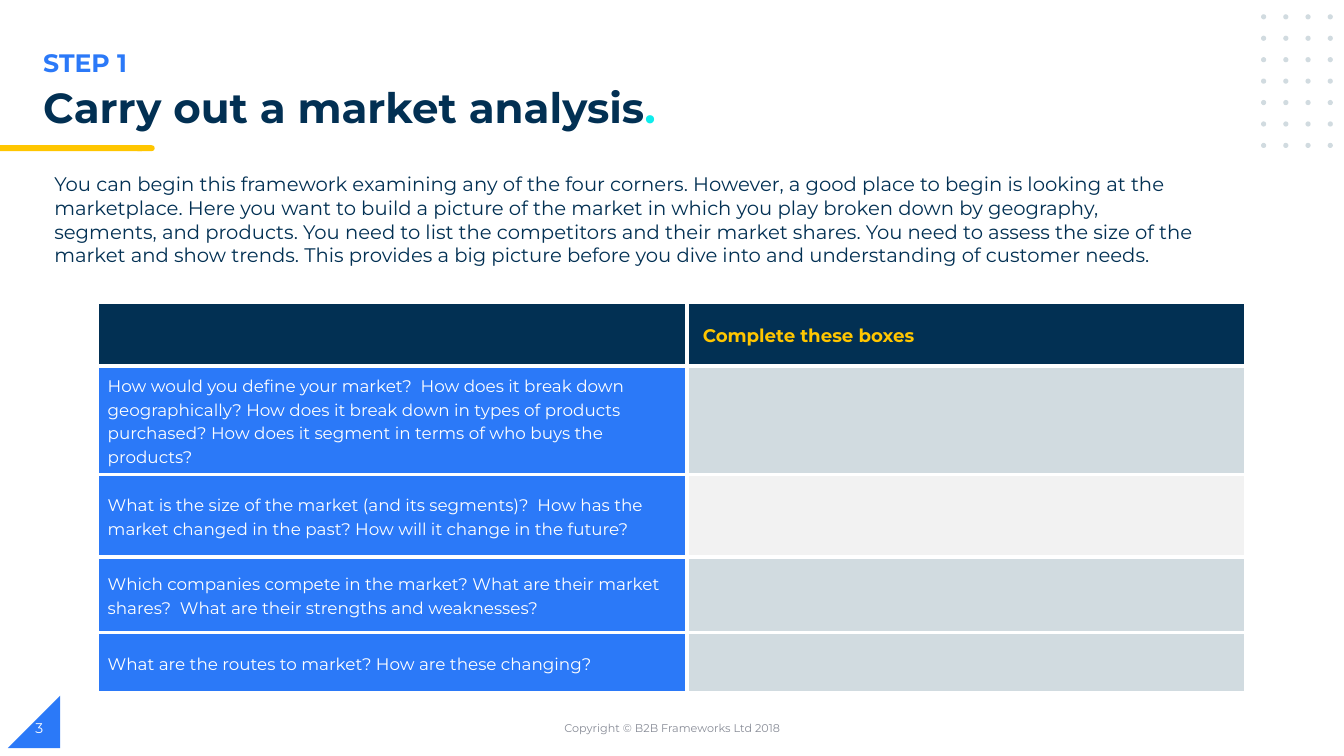
from dataclasses import dataclass
from itertools import product

from lxml.etree import SubElement
from pptx import Presentation
from pptx.dml.color import RGBColor
from pptx.enum.shapes import MSO_SHAPE
from pptx.enum.text import MSO_ANCHOR, PP_ALIGN
from pptx.oxml.ns import qn
from pptx.util import Cm, Pt


@dataclass(frozen=True)
class Theme:
    font: str = "Montserrat"
    spacer_font: str = "Arial"
    navy: str = "023053"
    blue: str = "2B79F8"
    yellow: str = "FFC600"
    cyan: str = "0EECEC"
    mist: str = "D1DBE0"
    pale: str = "F2F2F2"
    grey: str = "888C97"
    white: str = "FFFFFF"
    title: int = 30
    step: int = 18
    body: int = 14
    header: int = 13
    question: int = 12
    number: int = 10
    footer: int = 8


THEME = Theme()

INTRO = (
    "You can begin this framework examining any of the four corners. However, a good place "
    "to begin is looking at the marketplace. Here you want to build a picture of the market "
    "in which you play broken down by geography, segments, and products. You need to list the "
    "competitors and their market shares. You need to assess the size of the market and show "
    "trends. This provides a big picture before you dive into and understanding of customer needs."
)

# question, row height in cm, answer fill
QUESTIONS = [
    ("How would you define your market?  How does it break down geographically? How does it "
     "break down in types of products purchased? How does it segment in terms of who buys the "
     "products?", 2.74, THEME.mist),
    ("What is the size of the market (and its segments)?  How has the market changed in the "
     "past? How will it change in the future?", 2.08, THEME.pale),
    ("Which companies compete in the market? What are their market shares?  What are their "
     "strengths and weaknesses?", 1.9, THEME.mist),
    ("What are the routes to market? How are these changing?", 1.52, THEME.mist),
]
HEADER_HEIGHT = 1.6
COLUMN_WIDTHS = (14.86, 14.07)


def add_run(p, text, *, size, color, bold=False, font=THEME.font):
    r = p.add_run()
    r.text = text
    r.font.name = font
    r.font.size = Pt(size)
    r.font.bold = bold
    r.font.color.rgb = RGBColor.from_string(color)


def add_text(s, box, text, *, align=PP_ALIGN.LEFT, anchor=MSO_ANCHOR.TOP, spacing=1.0, **style):
    """Add a wrapping text box and return its paragraph."""
    tf = s.shapes.add_textbox(*map(Cm, box)).text_frame
    tf.word_wrap = True
    tf.vertical_anchor = anchor
    p = tf.paragraphs[0]
    p.alignment = align
    p.line_spacing = spacing
    add_run(p, text, **style)
    return p


def add_solid(s, kind, box, color):
    """Add a preset shape with a plain fill and no outline."""
    sp = s.shapes.add_shape(kind, *map(Cm, box))
    sp.shadow.inherit = False
    sp.fill.solid()
    sp.fill.fore_color.rgb = RGBColor.from_string(color)
    sp.line.fill.background()
    return sp


def add_dot_grid(s):
    for row, col in product(range(7), range(4)):
        add_solid(s, MSO_SHAPE.OVAL, (31.78 + 0.56 * col, 0.36 + 0.54 * row, 0.13, 0.13),
                  THEME.mist)


def style_cell(cell, fill):
    """Give a cell white borders, a fill and middle-anchored text; return its paragraph."""
    tc_pr = cell._tc.get_or_add_tcPr()
    for side in ("lnL", "lnR", "lnT", "lnB"):
        line = SubElement(tc_pr, qn(f"a:{side}"), w=str(Pt(3)))
        SubElement(SubElement(line, qn("a:solidFill")), qn("a:srgbClr"), val=THEME.white)
    cell.fill.solid()
    cell.fill.fore_color.rgb = RGBColor.from_string(fill)
    cell.vertical_anchor = MSO_ANCHOR.MIDDLE
    cell.margin_top = cell.margin_bottom = 0
    p = cell.text_frame.paragraphs[0]
    p.line_spacing = 1.15
    return p


def add_question_table(s):
    heights = [HEADER_HEIGHT] + [height for _, height, _ in QUESTIONS]
    table = s.shapes.add_table(len(heights), len(COLUMN_WIDTHS), Cm(2.46), Cm(7.62),
                               Cm(sum(COLUMN_WIDTHS)), Cm(sum(heights))).table
    table.first_row = table.horz_banding = False
    for column, width in zip(table.columns, COLUMN_WIDTHS):
        column.width = Cm(width)
    for row, height in zip(table.rows, heights):
        row.height = Cm(height)

    style_cell(table.cell(0, 0), THEME.navy)
    p = style_cell(table.cell(0, 1), THEME.navy)
    add_run(p, " ", size=THEME.body, color=THEME.navy, font=THEME.spacer_font)
    add_run(p, "Complete these boxes", size=THEME.header, color=THEME.yellow, bold=True)
    for i, (question, _, answer_fill) in enumerate(QUESTIONS, start=1):
        p = style_cell(table.cell(i, 0), THEME.blue)
        add_run(p, question, size=THEME.question, color=THEME.white)
        style_cell(table.cell(i, 1), answer_fill)


def add_heading(s):
    add_solid(s, MSO_SHAPE.FLOWCHART_TERMINATOR, (3.4, 3.66, 0.5, 0.15), THEME.yellow)
    add_solid(s, MSO_SHAPE.RECTANGLE, (0, 3.66, 3.58, 0.15), THEME.yellow)
    add_text(s, (0.84, 1.07, 17, 1.02), "STEP 1", size=THEME.step, color=THEME.blue, bold=True)
    p = add_text(s, (0.84, 2.08, 19.71, 1.02), "Carry out a market analysis", spacing=0.9,
                 size=THEME.title, color=THEME.navy, bold=True)
    add_run(p, ".", size=THEME.title, color=THEME.cyan, bold=True)


def add_footer(s):
    corner = add_solid(s, MSO_SHAPE.RIGHT_TRIANGLE, (0.2, 17.53, 1.32, 1.32), THEME.blue)
    corner.element.spPr.get_or_add_xfrm().set("flipH", "1")
    add_text(s, (11.23, 17.83, 11.43, 1.02), "Copyright © B2B Frameworks Ltd 2018",
             align=PP_ALIGN.CENTER, anchor=MSO_ANCHOR.MIDDLE, size=THEME.footer, color=THEME.grey)
    add_text(s, (0.64, 17.83, 7.62, 1.02), "3", anchor=MSO_ANCHOR.MIDDLE,
             size=THEME.number, color=THEME.white)


def main():
    prs = Presentation()
    prs.slide_width, prs.slide_height = Cm(33.87), Cm(19.05)
    s = prs.slides.add_slide(prs.slide_layouts[6])
    add_dot_grid(s)
    add_heading(s)
    add_footer(s)
    add_question_table(s)
    add_text(s, (1.12, 4.22, 29.51, 2.64), INTRO, size=THEME.body, color=THEME.navy)
    prs.save("out.pptx")


if __name__ == "__main__":
    main()
